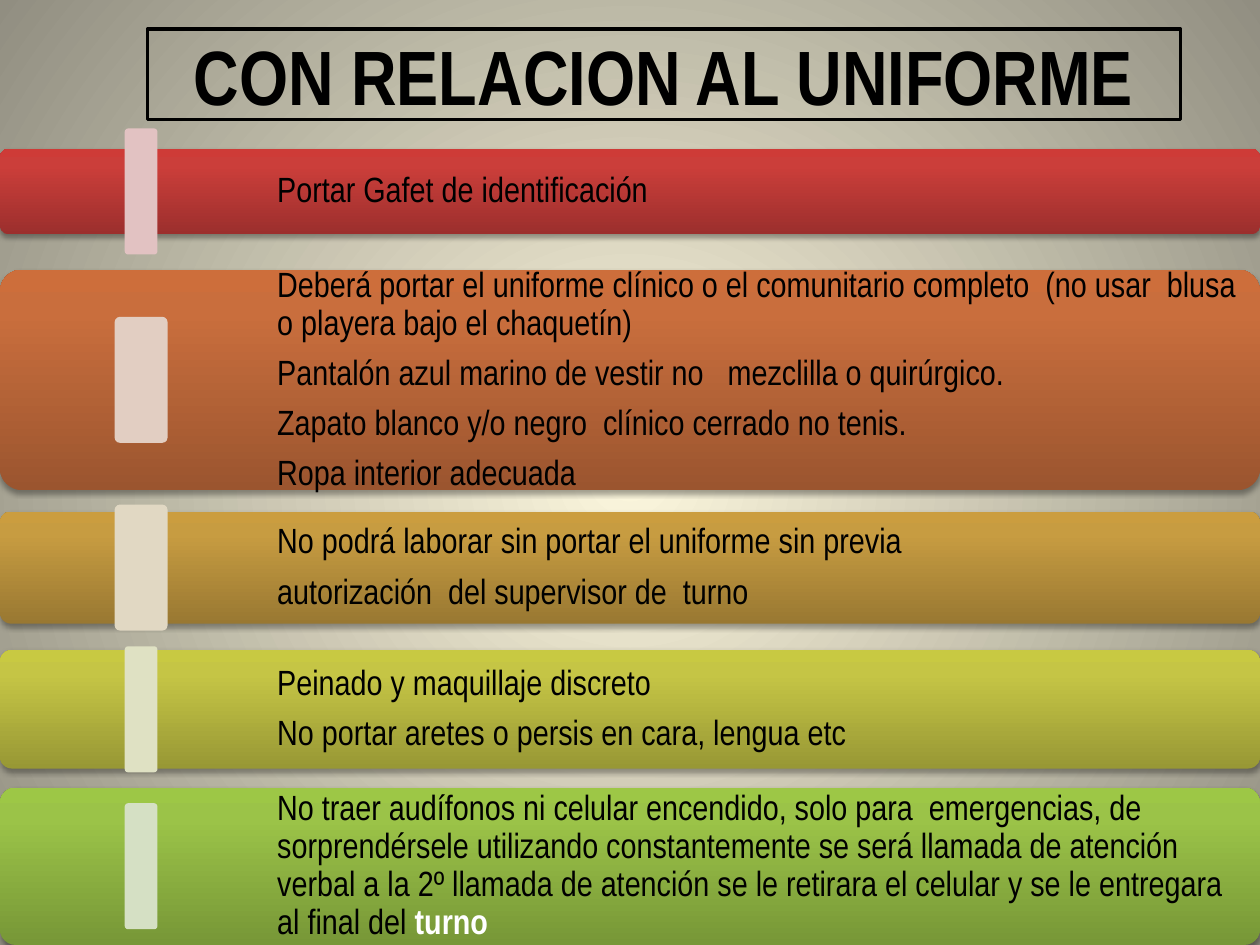
from lxml.etree import SubElement
from pptx import Presentation
from pptx.dml.color import RGBColor
from pptx.enum.shapes import MSO_SHAPE as Shape
from pptx.enum.text import MSO_ANCHOR as Anchor, MSO_AUTO_SIZE as AutoSize, PP_ALIGN as Align
from pptx.oxml.ns import qn
from pptx.util import Inches, Pt

BLACK = RGBColor(0x00, 0x00, 0x00)
WHITE = RGBColor(0xFF, 0xFF, 0xFF)
GLOW = RGBColor(0xFC, 0xF7, 0xDD)
EDGE = RGBColor(0x91, 0x8E, 0x81)
# Each band: dark base, body, bright top, tab
RED = [RGBColor.from_string(c) for c in ("9C2F2D", "CB3E3A", "CE3B37", "E2C2C2")]
ORANGE = [RGBColor.from_string(c) for c in ("9B552F", "C96E3D", "CD6E3B", "E2CEC2")]
GOLD = [RGBColor.from_string(c) for c in ("997832", "C79C41", "CB9D3F", "E1D8C3")]
YELLOW = [RGBColor.from_string(c) for c in ("989835", "C5C545", "C8C942", "DFE1C3")]
GREEN = [RGBColor.from_string(c) for c in ("779737", "9BC348", "9DC746", "D5E0C4")]

NARROW_TAB, WIDE_TAB = 0.26, 0.42

# Top, height, tab width, colours, paragraphs of (text, emphasised) runs
RULES = [
    (1.18, 0.68, NARROW_TAB, RED, [[("Portar Gafet de identificación", False)]]),
    (2.14, 1.75, WIDE_TAB, ORANGE, [
        [("Deberá portar el uniforme clínico o el comunitario completo  "
          "(no usar  blusa o playera bajo el chaquetín)", False)],
        [("Pantalón azul marino de vestir no   mezclilla o quirúrgico.", False)],
        [("Zapato blanco y/o negro  clínico cerrado no tenis.", False)],
        [("Ropa interior adecuada", False)],
    ]),
    (4.06, 0.89, WIDE_TAB, GOLD, [
        [("No podrá laborar sin portar el uniforme sin previa", False)],
        [("autorización  del supervisor de  turno", False)],
    ]),
    (5.16, 0.94, NARROW_TAB, YELLOW, [
        [("Peinado y maquillaje discreto", False)],
        [("No portar aretes o persis en cara, lengua etc", False)],
    ]),
    (6.25, 1.25, NARROW_TAB, GREEN, [
        [("No traer audífonos ni celular encendido, solo para  emergencias, de "
          "sorprendérsele utilizando constantemente se será llamada de atención "
          "verbal a la 2º llamada de atención se le retirara el celular y se le "
          "entregara al final del ", False), ("turno", True)],
    ]),
]


def add_color(parent, color, **transforms):
    node = SubElement(parent, qn("a:srgbClr"), val=str(color))
    for name, value in transforms.items():
        SubElement(node, qn(f"a:{name}"), val=str(value))


def fill_gradient(fill, owner, stops):
    """Give owner a gradient of (percent, color) stops and return its element."""
    fill.gradient()
    gradient = next(owner.iter(qn("a:gradFill")))
    for child in list(gradient):
        gradient.remove(child)
    stop_list = SubElement(gradient, qn("a:gsLst"))
    for percent, color in stops:
        add_color(SubElement(stop_list, qn("a:gs"), pos=str(percent * 1000)), color)
    return gradient


class RuleSlide:
    """Lengths are inches on a 10 by 7.5 slide."""
    FONT = "Arial Narrow"
    WIDTH, HEIGHT = 10, 7.5
    TEXT_LEFT = 2.12
    TAB_CENTER, TAB_HEIGHT = 1.12, 1
    INSET = 0.08

    def __init__(self, deck):
        deck.slide_width, deck.slide_height = Inches(self.WIDTH), Inches(self.HEIGHT)
        self.slide = deck.slides.add_slide(deck.slide_layouts[5])

    def background(self):
        gradient = fill_gradient(self.slide.background.fill, self.slide.element,
                                 [(0, GLOW), (100, EDGE)])
        circle = SubElement(gradient, qn("a:path"), path="circle")
        SubElement(circle, qn("a:fillToRect"), l="50000", t="50000", r="50000", b="50000")

    def add_run(self, paragraph, text, size, color, bold):
        run = paragraph.add_run()
        run.text = text
        font = run.font
        font.name, font.size, font.bold = self.FONT, Pt(size), bold
        font.color.rgb = color

    def title(self, text, left, top, width, height):
        title = self.slide.shapes.title
        title.left, title.top = Inches(left), Inches(top)
        title.width, title.height = Inches(width), Inches(height)
        title.line.color.rgb = BLACK
        title.line.width = Pt(2)
        frame = title.text_frame
        frame.auto_size = AutoSize.NONE
        frame.vertical_anchor = Anchor.MIDDLE
        frame.paragraphs[0].alignment = Align.CENTER
        self.add_run(frame.paragraphs[0], text, 44, BLACK, True)

    def rounded(self, left, top, width, height):
        box = self.slide.shapes.add_shape(Shape.ROUNDED_RECTANGLE, Inches(left),
                                          Inches(top), Inches(width), Inches(height))
        box.adjustments[0] = 0.1
        box.line.fill.background()
        box.shadow.inherit = False
        return box

    def band(self, top, height, colors):
        properties = (box := self.rounded(0, top, self.WIDTH, height)).element.spPr
        gradient = fill_gradient(box.fill, properties, zip((0, 80, 100), colors))
        SubElement(gradient, qn("a:lin"), ang=str(270 * 60000), scaled="0")
        shadow = SubElement(properties.find(qn("a:effectLst")), qn("a:outerShdw"),
                            blurRad=str(Pt(3.1)), dist=str(Pt(1.8)),
                            dir=str(90 * 60000), rotWithShape="0")
        add_color(shadow, BLACK, alpha=35000)

    def text(self, top, height, paragraphs):
        frame = self.slide.shapes.add_textbox(
            Inches(self.TEXT_LEFT), Inches(top),
            Inches(self.WIDTH - self.TEXT_LEFT), Inches(height)).text_frame
        frame.word_wrap = True
        frame.vertical_anchor = Anchor.MIDDLE
        frame.margin_left = frame.margin_right = Inches(self.INSET)
        frame.margin_top = frame.margin_bottom = Inches(self.INSET)
        for index, runs in enumerate(paragraphs):
            paragraph = frame.add_paragraph() if index else frame.paragraphs[0]
            paragraph.line_spacing = 0.9
            paragraph.space_after = Pt(7)
            for content, emphasised in runs:
                self.add_run(paragraph, content, 20,
                             WHITE if emphasised else BLACK, emphasised)

    def tab(self, middle, width, color):
        tab = self.rounded(self.TAB_CENTER - width / 2, middle - self.TAB_HEIGHT / 2,
                           width, self.TAB_HEIGHT)
        tab.fill.solid()
        tab.fill.fore_color.rgb = color

    def rule(self, top, height, tab_width, colors, paragraphs):
        *band_colors, tab_color = colors
        self.band(top, height, band_colors)
        self.text(top, height, paragraphs)
        self.tab(top + height / 2, tab_width, tab_color)


def main():
    deck = Presentation()
    page = RuleSlide(deck)
    page.background()
    page.title("CON RELACION AL UNIFORME", 1.17, 0.23, 8.2, 0.72)
    for rule in RULES:
        page.rule(*rule)
    deck.save("out.pptx")


if __name__ == "__main__":
    main()
